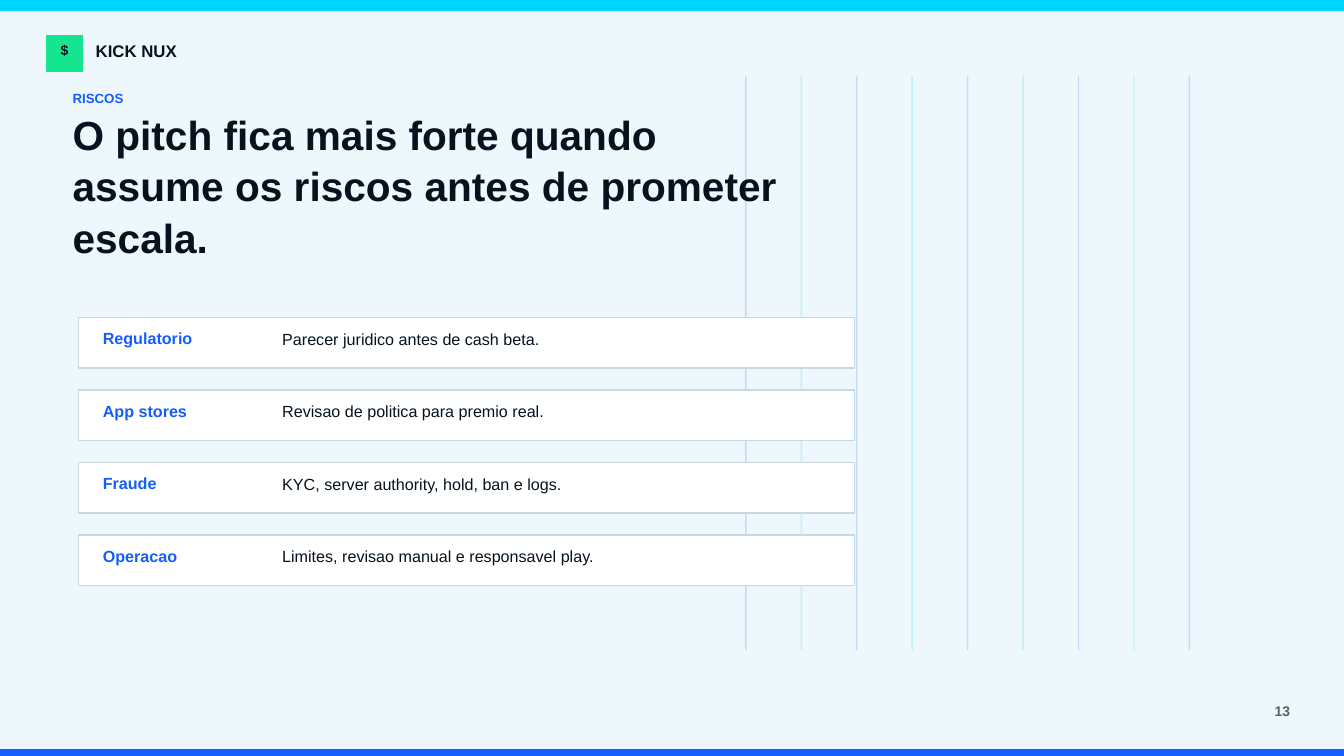
from dataclasses import dataclass

from lxml.etree import SubElement
from pptx import Presentation
from pptx.dml.color import RGBColor
from pptx.enum.shapes import MSO_CONNECTOR, MSO_SHAPE
from pptx.enum.text import MSO_ANCHOR, MSO_AUTO_SIZE, PP_ALIGN
from pptx.oxml.ns import qn
from pptx.shapes.autoshape import Shape
from pptx.slide import Slide
from pptx.util import Pt

COLORS = {
    "background": "EEF7FB", "cyan": "02D5FF", "blue": "155DFC", "green": "15E58F",
    "ink": "06131F", "gray": "536373", "white": "FFFFFF", "border": "C8D7E4",
}
WIDTH, HEIGHT = 960, 540
CARD_TOP, CARD_STEP = 226.8, 51.84
GRID_LEFT, GRID_STEP, GRID_TOP, GRID_BOTTOM = 532.8, 39.6, 54, 464.4


@dataclass(frozen=True)
class Box:
    left: float
    top: float
    width: float
    height: float
    fill: str
    line: str


@dataclass(frozen=True)
class Label:
    text: str
    left: float
    top: float
    width: float
    height: float
    size: float
    color: str = "ink"
    bold: bool = True
    align: PP_ALIGN = PP_ALIGN.LEFT


@dataclass(frozen=True)
class Risk:
    name: str
    answer: str


BOXES = [
    Box(0, 0, WIDTH, 7.2, "cyan", "cyan"),
    Box(0, 535.68, WIDTH, 4.32, "blue", "blue"),
    Box(33.12, 25.2, 25.92, 25.92, "green", "green"),
]
LABELS = [
    Label("$", 33.12, 30.96, 25.92, 8.64, 10, align=PP_ALIGN.CENTER),
    Label("KICK NUX", 68.4, 29.52, 122.4, 12.96, 12),
    Label("13", 884.16, 500.4, 37.44, 14.4, 10, "gray", align=PP_ALIGN.RIGHT),
    Label("RISCOS", 51.84, 61.92, 252, 15.84, 9.5, "blue"),
]
TITLE = Label("O pitch fica mais forte quando assume os riscos antes de prometer escala.",
              51.84, 88.56, 532.8, 86.4, 29)
RISKS = [
    Risk("Regulatorio", "Parecer juridico antes de cash beta."),
    Risk("App stores", "Revisao de politica para premio real."),
    Risk("Fraude", "KYC, server authority, hold, ban e logs."),
    Risk("Operacao", "Limites, revisao manual e responsavel play."),
]


def rgb(name: str) -> RGBColor:
    """Return a palette colour."""
    return RGBColor.from_string(COLORS[name])


def apply(target: object, values: dict) -> None:
    """Set each named value on the target."""
    for name, value in values.items():
        setattr(target, name, value)


def add_box(s: Slide, box: Box) -> None:
    """Draw a filled rectangle."""
    sp = s.shapes.add_shape(MSO_SHAPE.RECTANGLE, Pt(box.left), Pt(box.top),
                            Pt(box.width), Pt(box.height))
    sp.shadow.inherit = False
    sp.fill.solid()
    sp.fill.fore_color.rgb = rgb(box.fill)
    sp.line.color.rgb = rgb(box.line)
    sp.line.width = Pt(1)


def write(sp: Shape, label: Label, spacing: float = 1.0) -> None:
    """Place a text shape and format its paragraph."""
    apply(sp, {"left": Pt(label.left), "top": Pt(label.top),
               "width": Pt(label.width), "height": Pt(label.height)})
    tf = sp.text_frame
    apply(tf, {"word_wrap": True, "auto_size": MSO_AUTO_SIZE.NONE,
               "vertical_anchor": MSO_ANCHOR.MIDDLE, "margin_left": 0,
               "margin_right": 0, "margin_top": 0, "margin_bottom": 0})
    p = tf.paragraphs[0]
    apply(p, {"alignment": label.align, "line_spacing": spacing})
    r = p.add_run()
    r.text = label.text
    apply(r.font, {"name": "Arial", "size": Pt(label.size), "bold": label.bold})
    r.font.color.rgb = rgb(label.color)


def add_label(s: Slide, label: Label) -> None:
    """Add a text box."""
    write(s.shapes.add_textbox(0, 0, 0, 0), label)


def add_grid_line(s: Slide, x: float, color: str) -> None:
    """Draw a faint vertical line."""
    c = s.shapes.add_connector(MSO_CONNECTOR.STRAIGHT, Pt(x), Pt(GRID_TOP),
                               Pt(x), Pt(GRID_BOTTOM))
    c.line.color.rgb = rgb(color)
    c.line.width = Pt(1)
    sp_pr = c.element.spPr
    SubElement(sp_pr.find(".//" + qn("a:srgbClr")), qn("a:alpha"), val="18000")
    SubElement(sp_pr, qn("a:effectLst"))


def add_risk(s: Slide, risk: Risk, top: float) -> None:
    """Draw one risk card."""
    add_box(s, Box(56.16, top, 554.4, 36, "white", "border"))
    add_label(s, Label(risk.name, 73.44, top + 10.08, 111.6, 9.36, 11.5, "blue"))
    add_label(s, Label(risk.answer, 201.6, top + 7.2, 367.2, 15.84, 11.5, bold=False))


def main() -> None:
    """Build and save the slide."""
    prs = Presentation()
    apply(prs, {"slide_width": Pt(WIDTH), "slide_height": Pt(HEIGHT)})
    s = prs.slides.add_slide(prs.slide_layouts[5])
    s.background.fill.solid()
    s.background.fill.fore_color.rgb = rgb("background")
    for i in range(9):
        add_grid_line(s, GRID_LEFT + i * GRID_STEP, ("blue", "cyan")[i % 2])
    for box in BOXES:
        add_box(s, box)
    for label in LABELS:
        add_label(s, label)
    title = s.shapes.title
    write(title, TITLE, 1.05)
    s.shapes.element.append(title.element)
    for i, risk in enumerate(RISKS):
        add_risk(s, risk, CARD_TOP + i * CARD_STEP)
    prs.save("out.pptx")


if __name__ == "__main__":
    main()
